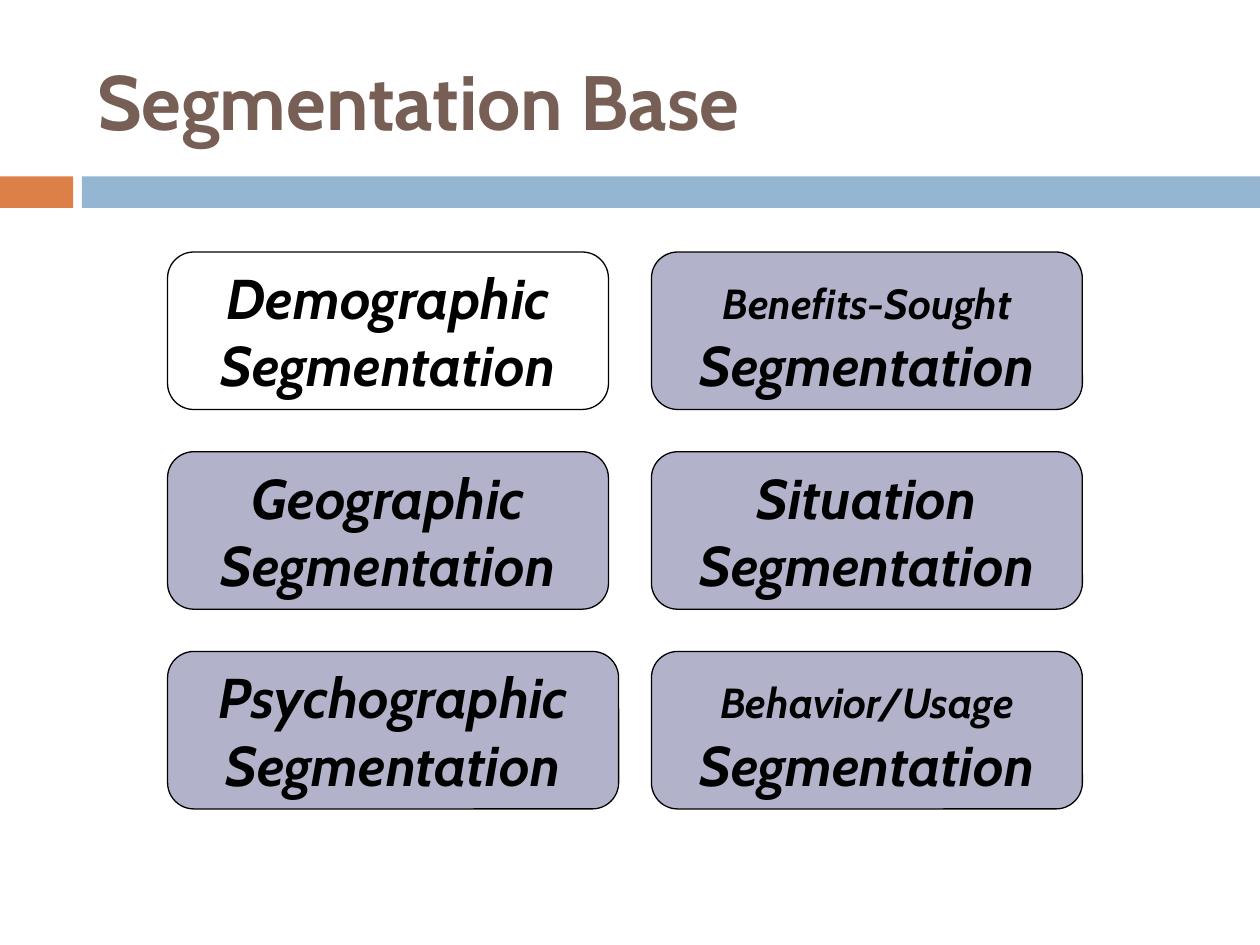
"""Build the Segmentation Base slide with its six tinted cards."""
from dataclasses import dataclass

from lxml import etree
from pptx import Presentation, util as u
from pptx.dml.color import RGBColor
from pptx.enum import shapes, text
from pptx.oxml import ns

FONT = "Cabin"
COLUMNS = (1.33, 5.17)
TOP, ROW_STEP, CARD_HEIGHT = 2, 1.585, 1.25


@dataclass(frozen=True)
class Card:
    column: int
    row: int
    label: str
    width: float
    size: int = 32
    fill: str = "666699"


CARDS = (
    Card(1, 1, "Situation", 3.42),
    Card(0, 2, "Psychographic", 3.58),
    Card(0, 1, "Geographic", 3.5),
    Card(1, 2, "Behavior/Usage", 3.42, size=24),
    Card(0, 0, "Demographic", 3.5, fill="FFFFFF"),
    Card(1, 0, "Benefits-Sought", 3.42, size=24),
)


def color(value: str) -> RGBColor:
    return RGBColor.from_string(value)


def add_text(paragraph, content: str, *, size: int, ink: str = "000000",
             bold: bool = True, italic: bool = False) -> None:
    run = paragraph.add_run()
    run.text = content
    run.font.name, run.font.size = FONT, u.Pt(size)
    run.font.bold, run.font.italic = bold, italic
    run.font.color.rgb = color(ink)


def add_block(slide, kind, left: float, top: float, width: float,
              height: float, fill: str):
    shape = slide.shapes.add_shape(
        kind, *map(u.Inches, (left, top, width, height)))
    shape.shadow.inherit = False
    shape.fill.solid()
    shape.fill.fore_color.rgb = color(fill)
    shape.line.fill.background()
    return shape


def add_title(slide, content: str) -> None:
    title = slide.shapes.title
    title.left, title.top, title.width, title.height = map(
        u.Inches, (0.67, 0.25, 8.92, 1.08))
    title.text_frame.vertical_anchor = text.MSO_ANCHOR.MIDDLE
    paragraph = title.text_frame.paragraphs[0]
    paragraph.alignment = text.PP_ALIGN.LEFT
    add_text(paragraph, content, size=44, ink="775F55")


def add_card(slide, card: Card) -> None:
    shape = add_block(slide, shapes.MSO_SHAPE.ROUNDED_RECTANGLE,
                      COLUMNS[card.column], TOP + card.row * ROW_STEP,
                      card.width, CARD_HEIGHT, card.fill)
    tint = shape._element.spPr.find(ns.qn("a:solidFill"))[0]
    etree.SubElement(tint, ns.qn("a:alpha"), val="50000")
    shape.line.color.rgb = color("000000")
    shape.line.width = u.Pt(0.75)
    frame = shape.text_frame
    frame.word_wrap = True
    frame.vertical_anchor = text.MSO_ANCHOR.MIDDLE
    paragraph = frame.paragraphs[0]
    paragraph.alignment = text.PP_ALIGN.CENTER
    spacing = etree.SubElement(paragraph._p.get_or_add_pPr(), ns.qn("a:spcBef"))
    etree.SubElement(spacing, ns.qn("a:spcPct"), val="50000")
    add_text(paragraph, card.label, size=card.size, italic=True)
    add_text(paragraph, " Segmentation", size=32, italic=True)


def main() -> None:
    presentation = Presentation()
    presentation.slide_width = u.Inches(10)
    presentation.slide_height = u.Inches(7.5)
    slide = presentation.slides.add_slide(presentation.slide_layouts[5])
    for left, width, fill in ((0, 0.58, "DD8047"), (0.65, 9.35, "94B6D2")):
        add_block(slide, shapes.MSO_SHAPE.RECTANGLE, left, 1.4, width, 0.25, fill)
    add_title(slide, "Segmentation Base")
    for card in CARDS:
        add_card(slide, card)
    presentation.save("out.pptx")


if __name__ == "__main__":
    main()
